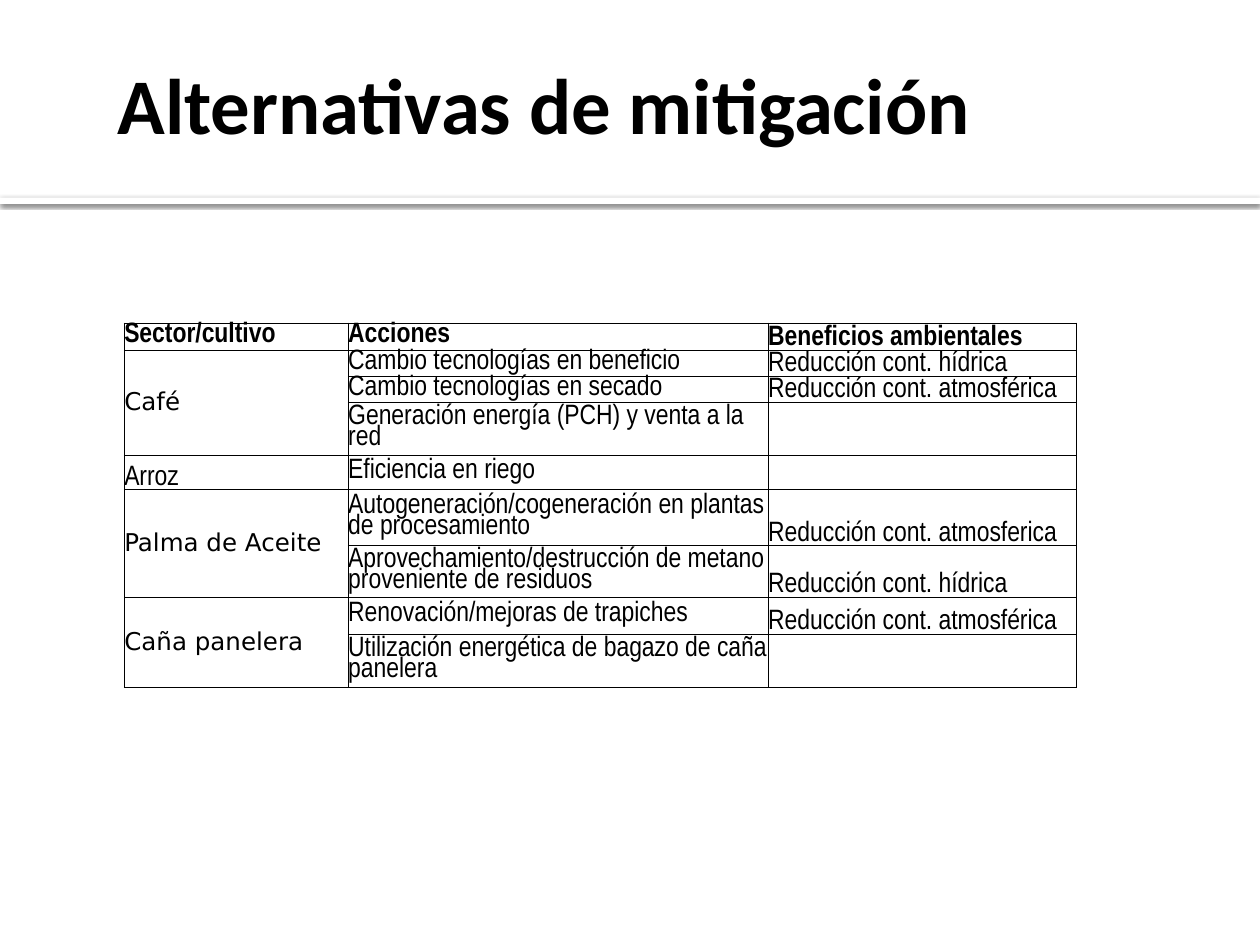
from dataclasses import dataclass

from lxml.etree import SubElement
from pptx import Presentation
from pptx.dml.color import RGBColor
from pptx.enum.shapes import MSO_SHAPE
from pptx.enum.text import MSO_ANCHOR, MSO_AUTO_SIZE, PP_ALIGN
from pptx.oxml import parse_xml
from pptx.oxml.ns import nsdecls, qn
from pptx.util import Pt

HUES = {"ink": "000000", "paper": "FFFFFF"}
NARROW = "Arial Narrow"
WIDTHS = (128, 240, 176)
HEADS = ("Sector/cultivo", "Acciones", "Beneficios ambientales")
HEAD_TALL = 15.4


@dataclass
class Action:
    label: str
    gain: str
    tall: float


@dataclass
class Sector:
    name: str
    actions: list[Action]


@dataclass
class Style:
    font: str = NARROW
    size: float = 16
    bold: bool = False
    space: float = 0.8


PLAIN = Style()
HEAD = Style(bold=True)
GROUP = Style("DejaVu Sans", 14, space=1)

SECTORS = [
    Sector("Café", [
        Action("Cambio tecnologías en beneficio", "Reducción cont. hídrica", 14.9),
        Action("Cambio tecnologías en secado", "Reducción cont. atmosférica", 14.9),
        Action("Generación energía (PCH) y venta a la red", "", 30.3),
    ]),
    Sector("Arroz", [Action("Eficiencia en riego", "", 14.9)]),
    Sector("Palma de Aceite", [
        Action("Autogeneración/cogeneración en plantas de procesamiento",
               "Reducción cont. atmosferica", 32),
        Action("Aprovechamiento/destrucción de metano proveniente de residuos",
               "Reducción cont. hídrica", 29.7),
    ]),
    Sector("Caña panelera", [
        Action("Renovación/mejoras de trapiches", "Reducción cont. atmosférica", 21.1),
        Action("Utilización energética de bagazo de caña panelera", "", 30.3),
    ]),
]


def tint(key: str) -> RGBColor:
    return RGBColor.from_string(HUES[key])


def add_run(para, text: str, style: Style) -> None:
    run = para.add_run()
    run.text = text
    run.font.name = style.font
    run.font.size = Pt(style.size)
    run.font.bold = style.bold
    run.font.color.rgb = tint("ink")


def add_title(slide, text: str) -> None:
    title = slide.shapes.title
    title.left, title.top, title.width, title.height = Pt(60), Pt(9.5), Pt(588), Pt(98.5)
    frame = title.text_frame
    frame.word_wrap = True
    frame.auto_size = MSO_AUTO_SIZE.NONE
    frame.vertical_anchor = MSO_ANCHOR.MIDDLE
    frame.margin_left = Pt(7.2)
    frame.margin_right = frame.margin_top = frame.margin_bottom = Pt(3.6)
    para = frame.paragraphs[0]
    para.alignment = PP_ALIGN.LEFT
    add_run(para, text, Style("Calibri", 45, True))


def add_band(slide, width: int) -> None:
    band = slide.shapes.add_shape(MSO_SHAPE.RECTANGLE, 0, Pt(113), width, Pt(3.6))
    band.fill.solid()
    band.fill.fore_color.rgb = tint("paper")
    band.line.fill.background()
    band.shadow.inherit = False
    effects = band._element.spPr.find(qn("a:effectLst"))
    effects.append(parse_xml(
        f'<a:outerShdw {nsdecls("a")} blurRad="{Pt(2.5)}" dist="{Pt(0.8)}" dir="5400000">'
        f'<a:srgbClr val="{HUES["ink"]}"><a:alpha val="60000"/></a:srgbClr></a:outerShdw>'))


def frame_cell(cell) -> None:
    cell.fill.background()
    cell.margin_left = cell.margin_right = cell.margin_top = cell.margin_bottom = 0
    for spot, side in enumerate(("lnL", "lnR", "lnT", "lnB")):
        cell._tc.tcPr.insert(spot, parse_xml(
            f'<a:{side} {nsdecls("a")} w="{Pt(0.5)}"><a:solidFill>'
            f'<a:srgbClr val="{HUES["ink"]}"/></a:solidFill></a:{side}>'))


def fill_cell(cell, text: str, style: Style, anchor: MSO_ANCHOR) -> None:
    cell.vertical_anchor = anchor
    para = cell.text_frame.paragraphs[0]
    para.line_spacing = style.space
    if text:
        add_run(para, text, style)
    else:
        SubElement(para._p, qn("a:endParaRPr"), sz=str(int(style.size * 100)))


def add_grid(slide) -> None:
    talls = [HEAD_TALL] + [act.tall for sector in SECTORS for act in sector.actions]
    table = slide.shapes.add_table(
        len(talls), len(WIDTHS), Pt(71), Pt(184.6), Pt(sum(WIDTHS)), Pt(sum(talls))).table
    table.first_row = table.horz_banding = False
    for col, width in zip(table.columns, WIDTHS):
        col.width = Pt(width)
    for row, tall in zip(table.rows, talls):
        row.height = Pt(tall)
    for cell in table.iter_cells():
        frame_cell(cell)

    middle, bottom = MSO_ANCHOR.MIDDLE, MSO_ANCHOR.BOTTOM
    for col, (text, anchor) in enumerate(zip(HEADS, (middle, middle, bottom))):
        fill_cell(table.cell(0, col), text, HEAD, anchor)
    top = 1
    for sector in SECTORS:
        count = len(sector.actions)
        first = table.cell(top, 0)
        if count > 1:
            first.merge(table.cell(top + count - 1, 0))
            fill_cell(first, sector.name, GROUP, middle)
        else:
            fill_cell(first, sector.name, PLAIN, bottom)
        for row, act in enumerate(sector.actions, top):
            fill_cell(table.cell(row, 1), act.label, PLAIN, middle)
            fill_cell(table.cell(row, 2), act.gain, PLAIN, bottom)
        top += count


def main() -> None:
    deck = Presentation()
    deck.slide_width, deck.slide_height = Pt(720), Pt(540)
    slide = deck.slides.add_slide(deck.slide_layouts[5])
    add_band(slide, deck.slide_width)
    add_title(slide, "Alternativas de mitigación")
    add_grid(slide)
    deck.save("out.pptx")


if __name__ == "__main__":
    main()
